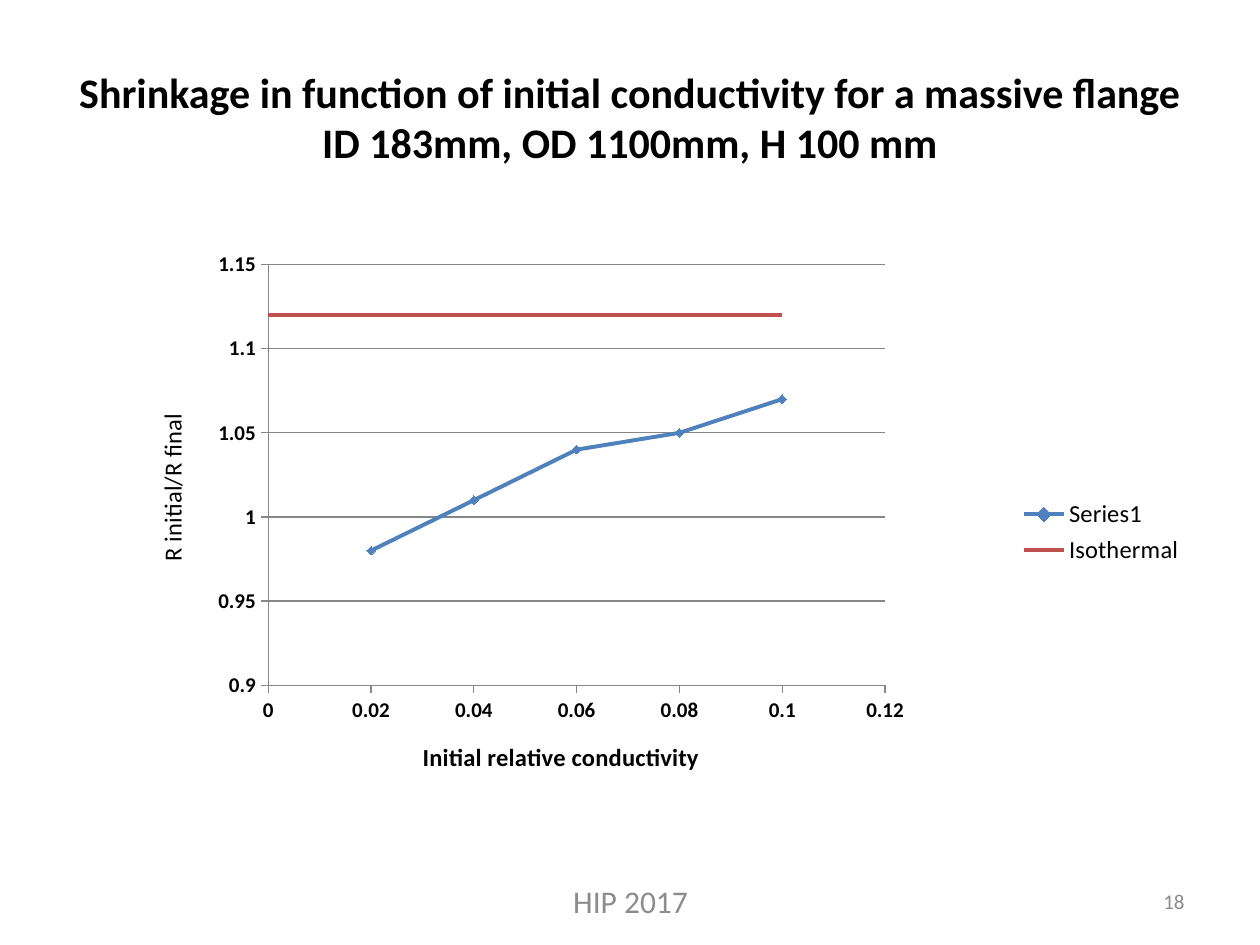
from dataclasses import dataclass

from lxml.etree import SubElement
from pptx import Presentation
from pptx.chart.data import XyChartData
from pptx.dml.color import RGBColor
from pptx.enum.chart import XL_CHART_TYPE, XL_LEGEND_POSITION, XL_MARKER_STYLE, XL_TICK_MARK
from pptx.enum.text import MSO_ANCHOR, PP_ALIGN
from pptx.oxml.ns import qn
from pptx.util import Inches, Pt

FONT = "Calibri"
BLACK = RGBColor(0x00, 0x00, 0x00)
GRAY = RGBColor(0x8C, 0x8C, 0x8C)
AXIS_GRAY = RGBColor(0x86, 0x86, 0x86)
BLUE = RGBColor(0x4F, 0x81, 0xBD)
RED = RGBColor(0xC0, 0x50, 0x4D)

WIDTH, HEIGHT = Inches(10), Inches(7.5)
MARGIN = 0.05  # share of the slide's width


@dataclass
class Curve:
    name: str
    points: list[tuple[float, float]]
    color: RGBColor
    marker: XL_MARKER_STYLE


@dataclass
class AxisStyle:
    title: str
    title_bold: bool
    minimum: float
    maximum: float
    step: float
    gridlines: bool


@dataclass
class FooterText:
    text: str
    left: float  # shares of the slide's width
    width: float
    size: int
    alignment: PP_ALIGN


CURVES = [
    Curve("Series1", [(0.1, 1.07), (0.08, 1.05), (0.06, 1.04), (0.04, 1.01), (0.02, 0.98)],
          BLUE, XL_MARKER_STYLE.DIAMOND),
    Curve("Isothermal", [(0, 1.12), (0.1, 1.12)], RED, XL_MARKER_STYLE.NONE),
]
X_AXIS = AxisStyle("Initial relative conductivity", True, 0, 0.12, 0.02, False)
Y_AXIS = AxisStyle("R initial/R final", False, 0.9, 1.15, 0.05, True)
PLOT_AREA = {"x": 0.181, "y": 0.071, "w": 0.544, "h": 0.675}  # shares of the chart
FOOTERS = [
    FooterText("HIP 2017", 0.342, 0.317, 18, PP_ALIGN.CENTER),
    FooterText("18", 0.717, 0.233, 12, PP_ALIGN.RIGHT),
]


def set_font(font, size: int, color: RGBColor = BLACK, bold: bool = False) -> None:
    font.name, font.size, font.bold = FONT, Pt(size), bold
    font.color.rgb = color


def place(shape, left: float, top: float, width: float, height: float) -> None:
    """Place a shape by shares of the slide's size."""
    shape.left, shape.top = int(WIDTH * left), int(HEIGHT * top)
    shape.width, shape.height = int(WIDTH * width), int(HEIGHT * height)


def add_title(slide) -> None:
    title = slide.shapes.title
    place(title, MARGIN, 0.04, 1 - 2 * MARGIN, 1 / 6)
    frame = title.text_frame
    frame.text = ("Shrinkage in function of initial conductivity for a massive flange\v"
                  "ID 183mm, OD 1100mm, H 100 mm")
    frame.vertical_anchor = MSO_ANCHOR.MIDDLE
    frame.paragraphs[0].alignment = PP_ALIGN.CENTER
    set_font(frame.paragraphs[0].font, 24, bold=True)


def style_axis(axis, style: AxisStyle) -> None:
    axis.minimum_scale, axis.maximum_scale = style.minimum, style.maximum
    axis.major_unit = style.step
    axis.major_tick_mark, axis.minor_tick_mark = XL_TICK_MARK.OUTSIDE, XL_TICK_MARK.NONE
    axis.has_major_gridlines = style.gridlines
    lines = [axis.format.line]
    if style.gridlines:
        lines.append(axis.major_gridlines.format.line)
    for line in lines:
        line.color.rgb, line.width = AXIS_GRAY, Pt(0.75)
    axis.tick_labels.number_format = "General"
    axis.tick_labels.number_format_is_linked = False
    set_font(axis.tick_labels.font, 12, bold=True)
    frame = axis.axis_title.text_frame
    frame.text = style.title
    set_font(frame.paragraphs[0].font, 14, bold=style.title_bold)


def style_curve(series, curve: Curve) -> None:
    series.smooth = True
    series.format.line.color.rgb, series.format.line.width = curve.color, Pt(2.25)
    series.marker.style = curve.marker
    if curve.marker != XL_MARKER_STYLE.NONE:
        series.marker.size = 5
        series.marker.format.fill.solid()
        series.marker.format.fill.fore_color.rgb = curve.color
        series.marker.format.line.color.rgb = curve.color


def set_plot_area(chart) -> None:
    """Fix the inner plot area by shares of the chart."""
    plot_area = chart.plots[0]._element.getparent()
    for old_layout in plot_area.findall(qn("c:layout")):
        plot_area.remove(old_layout)
    layout = SubElement(plot_area, qn("c:layout"))
    plot_area.insert(0, layout)
    manual = SubElement(layout, qn("c:manualLayout"))
    settings = {"layoutTarget": "inner", "xMode": "edge", "yMode": "edge", **PLOT_AREA}
    for tag, value in settings.items():
        SubElement(manual, qn(f"c:{tag}")).set("val", str(value))


def add_shrinkage_chart(slide) -> None:
    data = XyChartData()
    for curve in CURVES:
        series = data.add_series(curve.name)
        for x, y in curve.points:
            series.add_data_point(x, y)
    frame = slide.shapes.add_chart(XL_CHART_TYPE.XY_SCATTER_SMOOTH, 0, 0, WIDTH, HEIGHT, data)
    place(frame, MARGIN, 0.233, 1 - 2 * MARGIN, 0.66)
    chart = frame.chart
    chart.has_title = False
    set_font(chart.font, 10)
    chart.plots[0].vary_by_categories = False
    for series, curve in zip(chart.plots[0].series, CURVES):
        style_curve(series, curve)
    style_axis(chart.category_axis, X_AXIS)
    style_axis(chart.value_axis, Y_AXIS)
    chart.has_legend = True
    chart.legend.position = XL_LEGEND_POSITION.RIGHT
    chart.legend.include_in_layout = False
    set_font(chart.legend.font, 14)
    set_plot_area(chart)


def add_footer(slide, footer: FooterText) -> None:
    shape = slide.shapes.add_textbox(0, 0, WIDTH, HEIGHT)
    place(shape, footer.left, 0.927, footer.width, 0.053)
    frame = shape.text_frame
    frame.word_wrap = True
    frame.vertical_anchor = MSO_ANCHOR.MIDDLE
    paragraph = frame.paragraphs[0]
    paragraph.text = footer.text
    paragraph.alignment = footer.alignment
    set_font(paragraph.font, footer.size, GRAY)


def main() -> None:
    presentation = Presentation()
    presentation.slide_width, presentation.slide_height = WIDTH, HEIGHT
    slide = presentation.slides.add_slide(presentation.slide_layouts.get_by_name("Title Only"))
    # Chart behind, title and footers around it
    add_shrinkage_chart(slide)
    add_title(slide)
    for footer in FOOTERS:
        add_footer(slide, footer)
    presentation.save("out.pptx")


if __name__ == "__main__":
    main()
